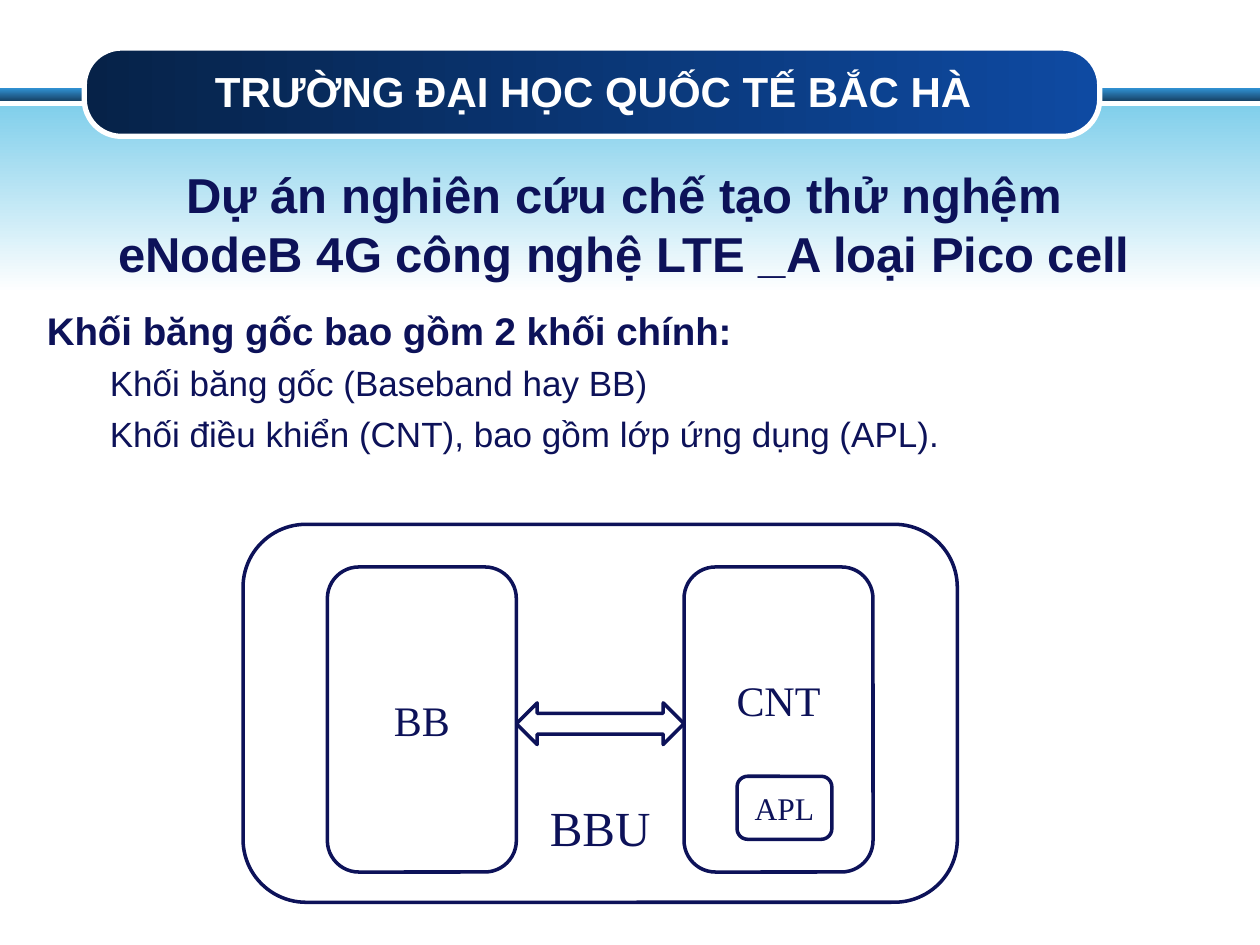
"""Build the slide on the two main blocks of the baseband unit."""
from dataclasses import dataclass
from typing import Any, Optional

import pptx
import pptx.dml.color
import pptx.enum.shapes
import pptx.enum.text
import pptx.oxml.ns
import pptx.util
from lxml import etree

Cm = pptx.util.Cm
Pt = pptx.util.Pt
Kind = pptx.enum.shapes.MSO_SHAPE
Align = pptx.enum.text.PP_ALIGN
Anchor = pptx.enum.text.MSO_ANCHOR


@dataclass(frozen=True)
class Theme:
    navy: str = "0D1259"
    white: str = "FFFFFF"
    stripe: tuple[str, str] = ("3191D3", "17456A")
    glow: tuple[str, str] = ("81CFEB", "FFFFFF")
    banner: tuple[str, str] = ("062248", "0E4AA2")
    sans: str = "Arial"
    serif: str = "Times New Roman"
    heading: int = 28
    title: int = 24
    lead: int = 22
    item: int = 20
    small: int = 18


@dataclass(frozen=True)
class Frame:
    left: float
    top: float
    width: float
    height: float

    def lengths(self) -> tuple[Any, ...]:
        return Cm(self.left), Cm(self.top), Cm(self.width), Cm(self.height)


@dataclass(frozen=True)
class Block:
    frame: Frame
    label: str = ""
    size: int = 24
    kind: Any = Kind.ROUNDED_RECTANGLE
    filled: bool = True
    anchor: Any = Anchor.MIDDLE
    bottom: float = 0.13


THEME = Theme()
BLOCKS = (
    Block(Frame(6.6, 11.43, 3.81, 6.15), "BB"),
    Block(Frame(13.79, 11.43, 3.81, 6.15), "CNT", bottom=0.93),
    Block(Frame(14.86, 15.65, 1.91, 1.27), "APL", THEME.small),
    Block(Frame(4.9, 10.57, 14.4, 7.62), "BBU", THEME.heading,
          filled=False, anchor=Anchor.BOTTOM, bottom=0.55),
    Block(Frame(10.41, 14.17, 3.38, 0.84), kind=Kind.LEFT_RIGHT_ARROW),
)
LEAD = "Khối băng gốc bao gồm 2 khối chính:"
ITEMS = ("Khối băng gốc (Baseband hay BB)",
         "Khối điều khiển (CNT), bao gồm lớp ứng dụng (APL).")


def rgb(value: str) -> Any:
    return pptx.dml.color.RGBColor.from_string(value)


def style(para: Any, size: int, color: str = THEME.navy, bold: bool = False,
          font: str = THEME.sans, align: Any = Align.LEFT) -> None:
    para.alignment = align
    for span in para.runs:
        span.font.size = Pt(size)
        span.font.name = font
        span.font.bold = bold
        span.font.color.rgb = rgb(color)


def add_plain(page: Any, kind: Any, frame: Frame, fill: Optional[str] = None) -> Any:
    shape = page.shapes.add_shape(kind, *frame.lengths())
    shape.shadow.inherit = False
    shape.line.fill.background()
    if fill:
        shape.fill.solid()
        shape.fill.fore_color.rgb = rgb(fill)
    else:
        shape.fill.background()
    return shape


def add_gradient(page: Any, kind: Any, frame: Frame,
                 colors: tuple[str, str], angle: int) -> Any:
    shape = add_plain(page, kind, frame)
    shape.fill.gradient()
    shape.fill.gradient_angle = angle
    for stop, color in zip(shape.fill.gradient_stops, colors):
        stop.color.rgb = rgb(color)
    return shape


def set_outline(shape: Any, color: str, width: int) -> None:
    shape.line.color.rgb = rgb(color)
    shape.line.width = Pt(width)


def add_block(page: Any, block: Block) -> None:
    shape = add_plain(page, block.kind, block.frame,
                      THEME.white if block.filled else None)
    set_outline(shape, THEME.navy, 2)
    if block.label:
        text = shape.text_frame
        text.text = block.label
        text.vertical_anchor = block.anchor
        text.margin_bottom = Cm(block.bottom)
        style(text.paragraphs[0], block.size, font=THEME.serif, align=Align.CENTER)


def place(holder: Any, frame: Frame) -> Any:
    holder.left, holder.top, holder.width, holder.height = frame.lengths()
    holder.element.getparent().append(holder.element)
    text = holder.text_frame
    text.auto_size = pptx.enum.text.MSO_AUTO_SIZE.NONE
    text.vertical_anchor = Anchor.MIDDLE
    return text


def fill_list(text: Any) -> None:
    text.text = "\n".join((LEAD, *ITEMS))
    for number, para in enumerate(text.paragraphs):
        para.level = min(number, 1)
        properties = para._p.get_or_add_pPr()
        properties.set("marL", str(Cm(1.27) * para.level))
        properties.set("indent", "0")
        para.line_spacing = 1.2
        para.space_before = Pt(0)
        etree.SubElement(properties, pptx.oxml.ns.qn("a:buNone"))
        style(para, THEME.item if number else THEME.lead, bold=number == 0)


def main() -> None:
    deck = pptx.Presentation()
    deck.slide_width, deck.slide_height = Cm(25.4), Cm(19.05)
    page = deck.slides.add_slide(deck.slide_layouts[1])
    title, body = page.shapes.title, page.placeholders[1]

    add_gradient(page, Kind.RECTANGLE, Frame(0, 1.78, 25.4, 0.25), THEME.stripe, 270)
    add_gradient(page, Kind.RECTANGLE, Frame(0, 2.13, 25.4, 3.78), THEME.glow, 270)
    banner = add_gradient(page, Kind.ROUNDED_RECTANGLE,
                          Frame(1.7, 0.97, 20.47, 1.78), THEME.banner, 0)
    banner.adjustments[0] = 0.42
    set_outline(banner, THEME.white, 3)

    fill_list(place(body, Frame(0.69, 5.87, 23.83, 3.43)))
    heading = place(title, Frame(1.52, 1.04, 20.88, 1.57))
    heading.text = "TRƯỜNG ĐẠI HỌC QUỐC TẾ BẮC HÀ"
    style(heading.paragraphs[0], THEME.title, THEME.white, True, align=Align.CENTER)

    project = page.shapes.add_textbox(*Frame(1.52, 3.2, 22.12, 2.64).lengths())
    project.text_frame.word_wrap = True
    project.text_frame.text = ("Dự án nghiên cứu chế tạo thử nghệm eNodeB 4G "
                               "công nghệ LTE _A loại Pico cell")
    style(project.text_frame.paragraphs[0], THEME.heading, bold=True,
          align=Align.CENTER)

    for block in BLOCKS:
        add_block(page, block)
    deck.save("out.pptx")


if __name__ == "__main__":
    main()
